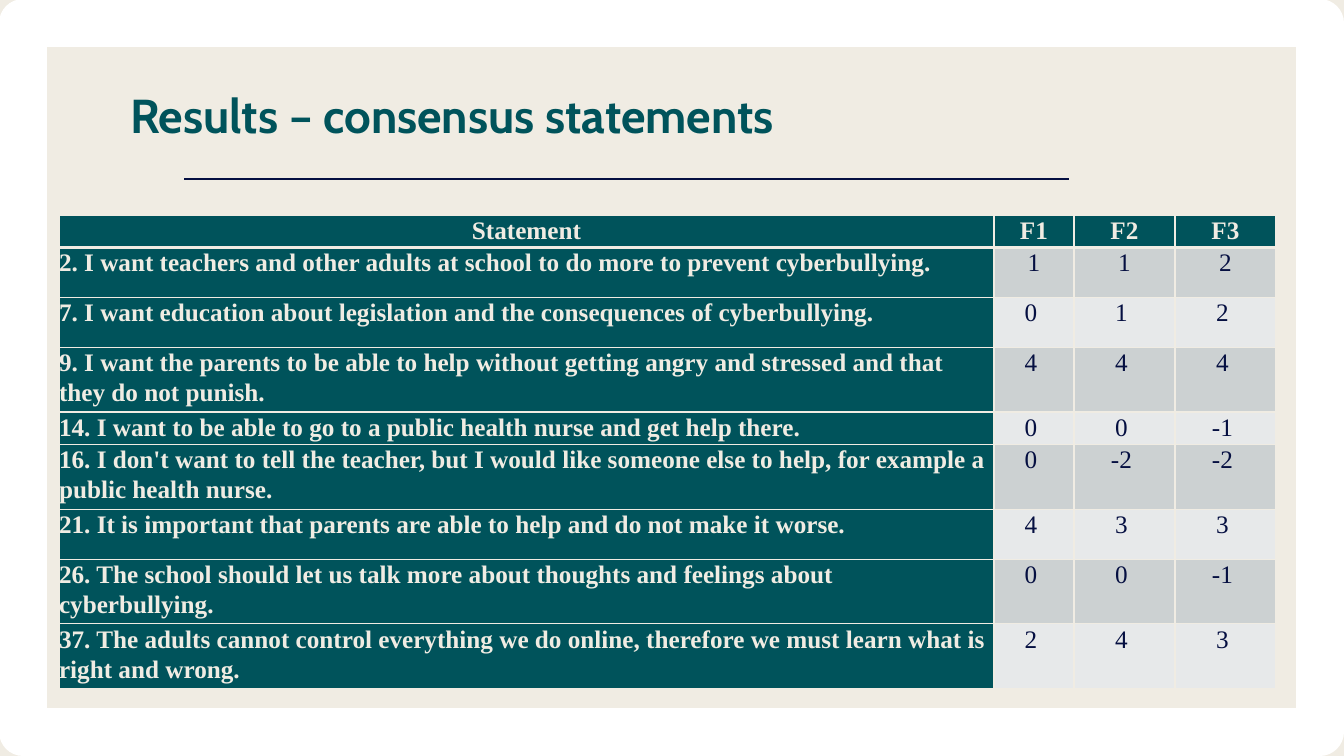
from lxml import etree
from pptx import Presentation
from pptx import util as u
from pptx.dml.color import RGBColor
from pptx.enum import shapes, text
from pptx.oxml import ns

CREAM = RGBColor(0xF0, 0xEC, 0xE3)
TEAL = RGBColor(0x00, 0x53, 0x5B)
NAVY = RGBColor(0x05, 0x0F, 0x41)
WHITE = RGBColor(0xFF, 0xFF, 0xFF)
BANDS = [RGBColor(0xCC, 0xD1, 0xD2), RGBColor(0xE7, 0xE9, 0xEA)]

HEADINGS = ["Statement", "F1", "F2", "F3"]
STATEMENTS = [
    ("2. I want teachers and other adults at school to do more to prevent cyberbullying.", 1, 1, 2),
    ("7. I want education about legislation and the consequences of cyberbullying.", 0, 1, 2),
    ("9. I want the parents to be able to help without getting angry and stressed and that they do not punish.", 4, 4, 4),
    ("14. I want to be able to go to a public health nurse and get help there.", 0, 0, -1),
    ("16. I don't want to tell the teacher, but I would like someone else to help, for example a public health nurse.", 0, -2, -2),
    ("21. It is important that parents are able to help and do not make it worse.", 4, 3, 3),
    ("26. The school should let us talk more about thoughts and feelings about cyberbullying.", 0, 0, -1),
    ("37. The adults cannot control everything we do online, therefore we must learn what is right and wrong.", 2, 4, 3),
]
COLUMN_WIDTHS = [935, 80, 101, 101]
ROW_HEIGHTS = [27, 50, 50, 50, 27, 50, 50, 50, 50]


def px(length):
    return u.Emu(round(length * 12192000 / 1344))


def add_border(cell, side, points):
    line = etree.SubElement(cell._tc.get_or_add_tcPr(), ns.qn("a:ln" + side), w=str(u.Pt(points)))
    fill = etree.SubElement(line, ns.qn("a:solidFill"))
    etree.SubElement(fill, ns.qn("a:srgbClr"), val=str(CREAM))


presentation = Presentation()
presentation.slide_width, presentation.slide_height = px(1344), px(756)
slide = presentation.slides.add_slide(presentation.slide_layouts[6])

# Background and white frame
slide.background.fill.solid()
slide.background.fill.fore_color.rgb = CREAM
frame = slide.shapes.add_shape(shapes.MSO_SHAPE.RECTANGLE, px(23), px(23), px(1297), px(709))
frame.shadow.inherit = False
frame.fill.background()
frame.line.color.rgb = WHITE
frame.line.width = u.Pt(34)

# Rule under the title
rule = slide.shapes.add_connector(shapes.MSO_CONNECTOR.STRAIGHT, px(1069), px(179), px(184), px(179))
rule.line.color.rgb = NAVY
rule.line.width = u.Pt(1.5)
etree.SubElement(rule._element.spPr, ns.qn("a:effectLst"))

# Title
title = slide.shapes.add_textbox(px(130), px(92), px(885), px(77)).text_frame
title.word_wrap = True
title.margin_left = title.margin_right = title.margin_top = title.margin_bottom = 0
paragraph = title.paragraphs[0]
paragraph.text = "Results – consensus statements"
paragraph.line_spacing = 0.9
paragraph.font.name = "Cabin"
paragraph.font.size = u.Pt(34)
paragraph.font.bold = True
paragraph.font.color.rgb = TEAL

# Table of statements and factor scores
rows = [HEADINGS, *STATEMENTS]
table = slide.shapes.add_table(
    len(rows), len(HEADINGS), px(59), px(215), px(sum(COLUMN_WIDTHS)), px(sum(ROW_HEIGHTS))
).table
for column, width in zip(table.columns, COLUMN_WIDTHS):
    column.width = px(width)
for row, height in zip(table.rows, ROW_HEIGHTS):
    row.height = px(height)

for row_index, values in enumerate(rows):
    for column_index, value in enumerate(values):
        cell = table.cell(row_index, column_index)
        is_score = row_index > 0 and column_index > 0
        cell.margin_left = cell.margin_right = cell.margin_top = cell.margin_bottom = 0
        if is_score and row_index > 1:
            cell.margin_right = px(6)

        # Borders go before the fill, with a thick line below the headings
        add_border(cell, "L", 1)
        add_border(cell, "R", 1)
        add_border(cell, "T", 3 if row_index == 1 else 1)
        add_border(cell, "B", 3 if row_index == 0 else 1)
        cell.fill.solid()
        cell.fill.fore_color.rgb = BANDS[(row_index - 1) % 2] if is_score else TEAL

        paragraph = cell.text_frame.paragraphs[0]
        paragraph.text = str(value)
        paragraph.line_spacing = 1.07
        paragraph.space_after = u.Pt(8)
        if row_index == 0 or is_score:
            paragraph.alignment = text.PP_ALIGN.CENTER
        paragraph.font.name = "Times New Roman"
        paragraph.font.size = u.Pt(18)
        paragraph.font.bold = not is_score
        paragraph.font.color.rgb = NAVY if is_score else CREAM

presentation.save("out.pptx")
